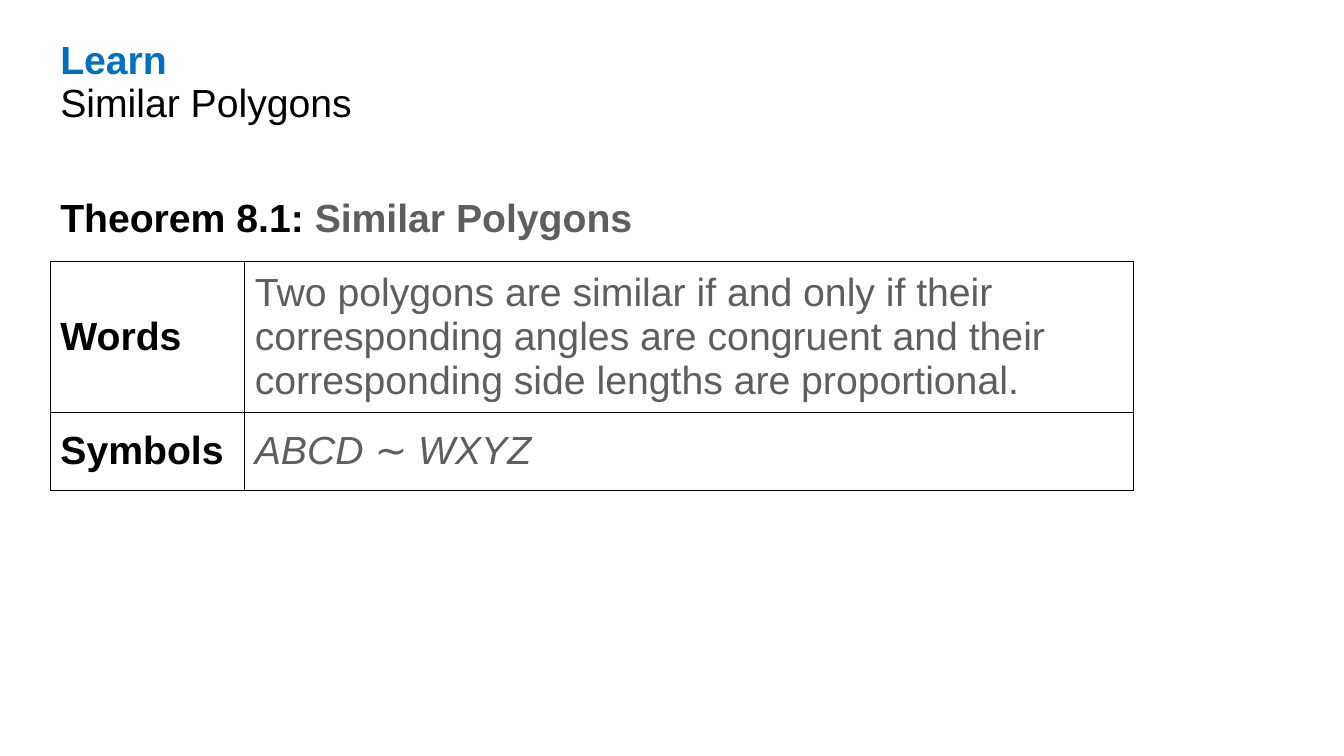
import pptx
import pptx.dml.color
import pptx.enum.text
import pptx.oxml
import pptx.oxml.ns
import pptx.util

Cm = pptx.util.Cm
BLACK, GREY, BLUE = "000000", "5E5E5E", "0070C0"


def colour(value):
    return pptx.dml.color.RGBColor.from_string(value)


def style(run, ink, bold=False, italic=False):
    run.font.name = "Arial"
    run.font.size = pptx.util.Pt(28)
    run.font.color.rgb = colour(ink)
    run.font.bold = bold
    run.font.italic = italic


def write(paragraph, pieces):
    for text, *look in pieces:
        run = paragraph.add_run()
        run.text = text
        style(run, *look)


def add_text(slide, box):
    frame = slide.shapes.add_textbox(*map(Cm, box)).text_frame
    frame.word_wrap = True
    return frame.paragraphs[0]


def add_heading(slide, box):
    heading = add_text(slide, box)
    heading.text = "Learn\vSimilar Polygons"
    heading.line_spacing = 0.9
    section, topic = heading.runs
    style(section, BLUE, True)
    style(topic, BLACK)


def add_theorem_title(slide, box):
    write(add_text(slide, box), [
        ("Theorem 8.1: ", BLACK, True),
        ("Similar Polygons", GREY, True),
    ])


def outline(cell):
    properties = cell._tc.get_or_add_tcPr()
    for side in ("lnL", "lnR", "lnT", "lnB"):
        properties.append(pptx.oxml.parse_xml(
            f'<a:{side} {pptx.oxml.ns.nsdecls("a")} w="12700"><a:solidFill>'
            f'<a:srgbClr val="{BLACK}"/></a:solidFill></a:{side}>'))


def add_theorem_table(slide, box):
    left, top, width, height = box
    label_width, words_height = 4.9, 3.58
    statements = [
        ("Words", [("Two polygons are similar if and only if their corresponding "
                    "angles are congruent and their corresponding side lengths "
                    "are proportional.", GREY)]),
        ("Symbols", [("ABCD ", GREY, False, True), ("∼ ", GREY),
                     ("WXYZ", GREY, False, True)]),
    ]
    theorem = slide.shapes.add_table(
        2, 2, Cm(left), Cm(top), Cm(width), Cm(height)).table
    theorem.first_row = theorem.horz_banding = False
    for column, size in zip(theorem.columns, (label_width, width - label_width)):
        column.width = Cm(size)
    for row, size in zip(theorem.rows, (words_height, height - words_height)):
        row.height = Cm(size)
    for row, (label, statement) in zip(theorem.rows, statements):
        for cell, pieces in zip(row.cells, ([(label, BLACK, True)], statement)):
            write(cell.text_frame.paragraphs[0], pieces)
            cell.vertical_anchor = pptx.enum.text.MSO_ANCHOR.MIDDLE
            outline(cell)
            cell.fill.background()


def main():
    deck = pptx.Presentation()
    deck.slide_width, deck.slide_height = Cm(33.87), Cm(19.05)
    slide = deck.slides.add_slide(deck.slide_layouts[6])
    margin = 1.27
    add_theorem_title(slide, (margin, 4.75, 24.4, 1.6))
    add_heading(slide, (margin, 0.91, 19.3, 3.58))
    add_theorem_table(slide, (margin, 6.58, 27.3, 5.54))
    deck.save("out.pptx")


if __name__ == "__main__":
    main()
